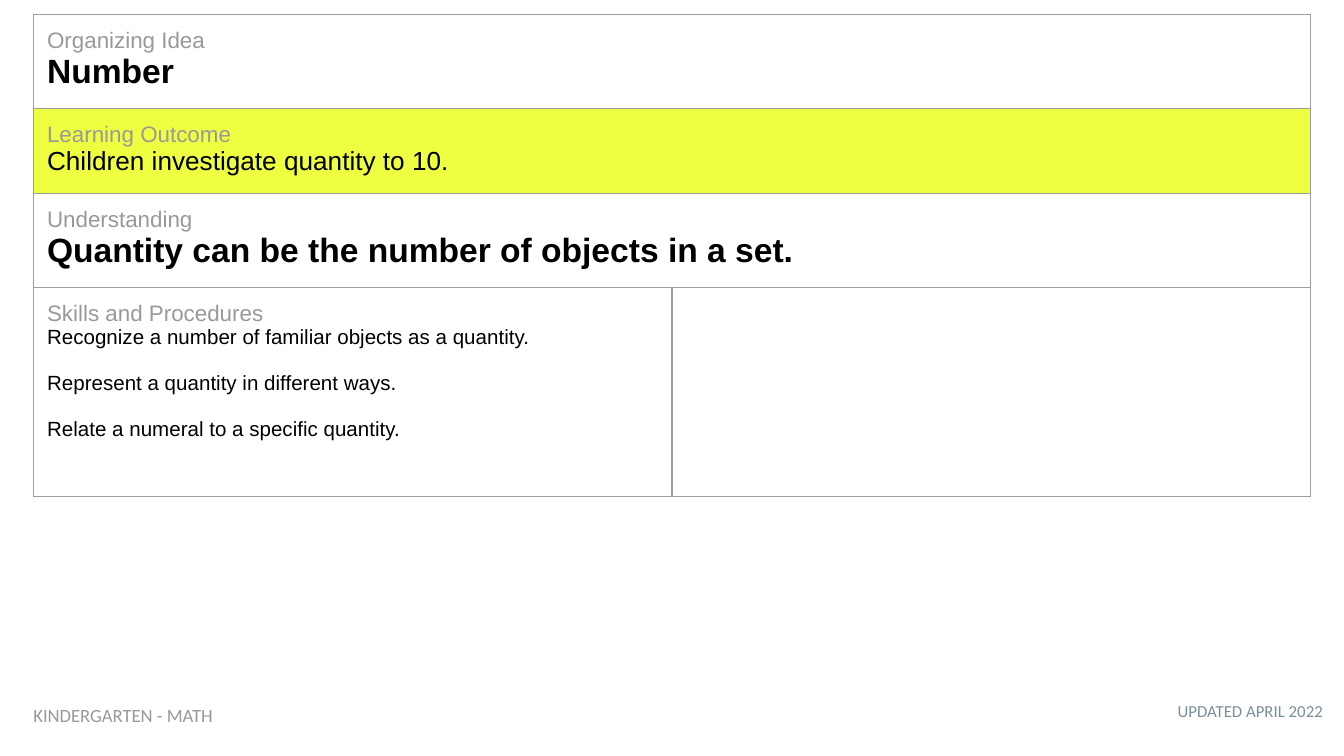
from lxml.etree import SubElement
from pptx import Presentation
from pptx.dml.color import RGBColor
from pptx.enum.text import MSO_ANCHOR, PP_ALIGN
from pptx.oxml.ns import qn
from pptx.util import Pt

COLORS = {
    "label": "999999",
    "body": "000000",
    "highlight": "EEFF41",
    "border": "9E9E9E",
    "date": "78909C",
}
INSET = Pt(7.2)
MARGINS = {f"margin_{side}": INSET for side in ("left", "top", "right", "bottom")}
LABEL = {"size": Pt(12), "bold": False}
HEADLINE = {"size": Pt(18), "bold": True}
OUTCOME = {"size": Pt(14), "bold": False}
SKILL = {"size": Pt(11), "bold": False}

SECTIONS = [
    ("Organizing Idea", ["Number"], HEADLINE, 50.4),
    ("Learning Outcome", ["Children investigate quantity to 10."], OUTCOME, 45.6),
    ("Understanding", ["Quantity can be the number of objects in a set."], HEADLINE, 50.4),
    ("Skills and Procedures", [
        "Recognize a number of familiar objects as a quantity.",
        "Represent a quantity in different ways.",
        "Relate a numeral to a specific quantity.",
    ], SKILL, 111.6),
]


def apply_format(target, values):
    for attribute, value in values.items():
        setattr(target, attribute, value)


def write_line(paragraph, text, color, font_format, family="Arial"):
    run = paragraph.add_run()
    run.text = text
    apply_format(run.font, {"name": family, **font_format})
    run.font.color.rgb = RGBColor.from_string(COLORS[color])


def style_cell(cell, fill=None):
    apply_format(cell, {**MARGINS, "vertical_anchor": MSO_ANCHOR.TOP})
    properties = cell._tc.get_or_add_tcPr()
    for edge in ("lnL", "lnR", "lnT", "lnB"):
        border = SubElement(properties, qn(f"a:{edge}"), w=str(Pt(0.75)))
        color = SubElement(SubElement(border, qn("a:solidFill")), qn("a:srgbClr"))
        color.set("val", COLORS["border"])
    if fill:
        cell.fill.solid()
        cell.fill.fore_color.rgb = RGBColor.from_string(COLORS[fill])
    else:
        cell.fill.background()


def fill_section(cell, label, statements, font_format):
    frame = cell.text_frame
    write_line(frame.paragraphs[0], label, "label", LABEL)
    for position, statement in enumerate(statements):
        paragraph = frame.add_paragraph()
        paragraph.space_before = Pt(12.2 if position else 0)
        write_line(paragraph, statement, "body", font_format)


def add_curriculum_table(slide):
    heights = [section[-1] for section in SECTIONS]
    table = slide.shapes.add_table(
        len(SECTIONS), 2, Pt(18), Pt(7.7), Pt(684), Pt(sum(heights))
    ).table
    apply_format(table, {"first_row": False, "horz_banding": False})
    for index, (label, statements, font_format, height) in enumerate(SECTIONS):
        table.rows[index].height = Pt(height)
        fill = "highlight" if label == "Learning Outcome" else None
        for cell in table.rows[index].cells:
            style_cell(cell, fill)
        if label != "Skills and Procedures":
            table.cell(index, 0).merge(table.cell(index, 1))
        fill_section(table.cell(index, 0), label, statements, font_format)


def add_footer(slide, text, bounds, color, size, alignment):
    frame = slide.shapes.add_textbox(*map(Pt, bounds)).text_frame
    apply_format(frame, {**MARGINS, "word_wrap": True, "vertical_anchor": MSO_ANCHOR.TOP})
    frame.paragraphs[0].alignment = alignment
    write_line(frame.paragraphs[0], text, color, {"size": Pt(size)}, "Calibri")


def main():
    presentation = Presentation()
    apply_format(presentation, {"slide_width": Pt(720), "slide_height": Pt(405)})
    slide = presentation.slides.add_slide(presentation.slide_layouts[6])
    add_footer(slide, "UPDATED APRIL 2022", (521.3, 370, 194.4, 25.2),
               "date", 9, PP_ALIGN.RIGHT)
    add_curriculum_table(slide)
    add_footer(slide, "KINDERGARTEN - MATH", (10.8, 370.8, 216.7, 26.6),
               "label", 10, PP_ALIGN.LEFT)
    presentation.save("out.pptx")


if __name__ == "__main__":
    main()
